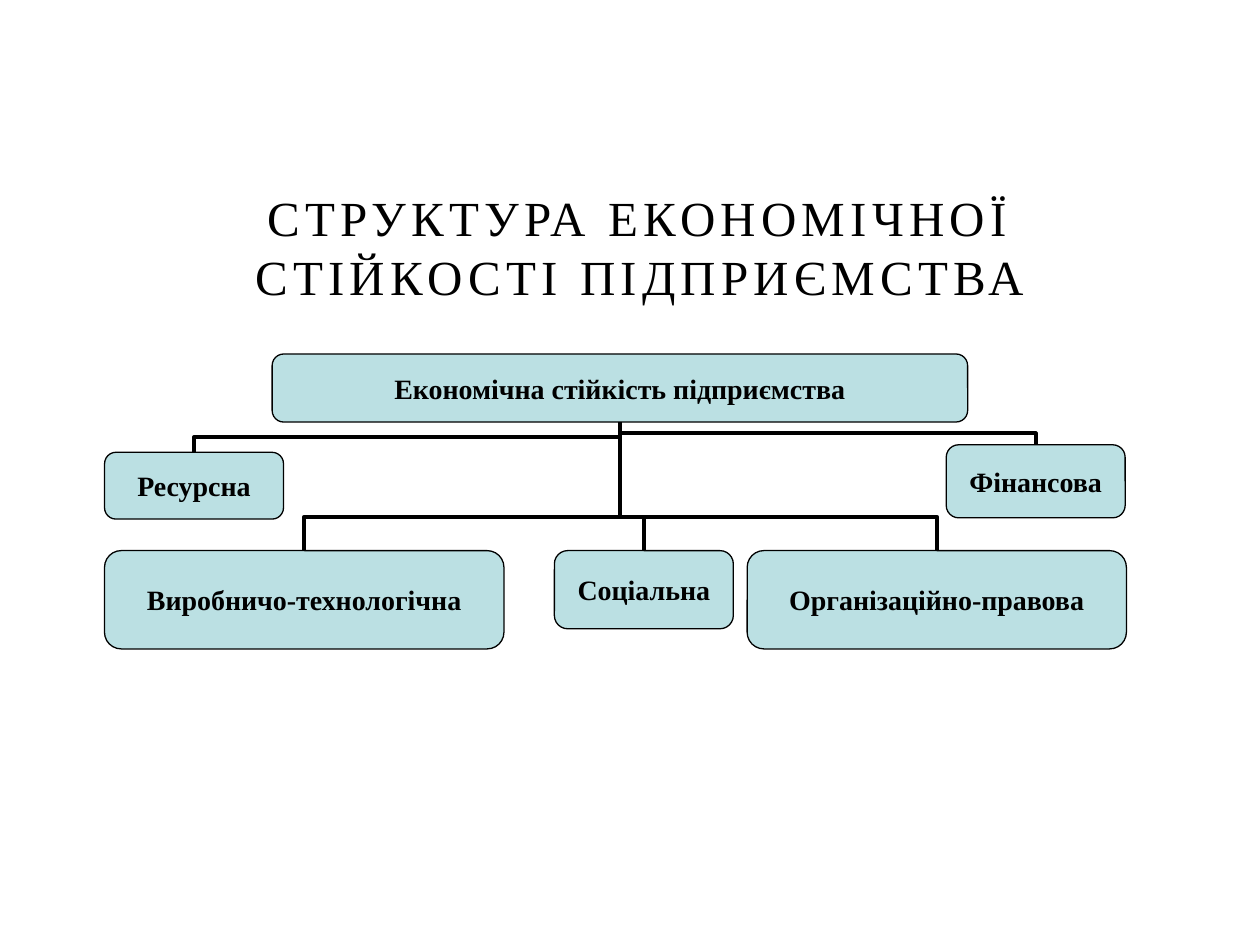
from lxml import etree
from pptx import Presentation
from pptx.dml.color import RGBColor
from pptx.enum.shapes import MSO_CONNECTOR, MSO_SHAPE
from pptx.enum.text import MSO_ANCHOR, PP_ALIGN
from pptx.oxml.ns import qn
from pptx.util import Inches, Pt

ELBOW = MSO_CONNECTOR.ELBOW
ROUNDED = MSO_SHAPE.ROUNDED_RECTANGLE
TOP, MIDDLE = MSO_ANCHOR.TOP, MSO_ANCHOR.MIDDLE
CENTER = PP_ALIGN.CENTER
TOP_SITE, BOTTOM_SITE = 0, 2

COLORS = {"ink": "000000", "box": "BBE0E3"}
TITLE_FORMAT = {"name": "Times New Roman", "size": Pt(28), "bold": False}
BOX_FORMAT = {"name": "Times New Roman", "size": Pt(16), "bold": True}


class ChartSlide:
    """Holds the slide and draws the parts of the hierarchy on it."""

    def __init__(self, slide):
        self.slide = slide

    def color(self, name):
        return RGBColor.from_string(COLORS[name])

    def add_text(self, shape, text, font_format, anchor, inset=0):
        frame = shape.text_frame
        frame.word_wrap = True
        frame.vertical_anchor = anchor
        for side in ("left", "top", "right", "bottom"):
            setattr(frame, f"margin_{side}", Inches(inset))
        paragraph = frame.paragraphs[0]
        paragraph.alignment = CENTER
        run = paragraph.add_run()
        run.text = text
        for name, value in font_format.items():
            setattr(run.font, name, value)
        run.font.color.rgb = self.color("ink")
        return run

    def title(self, text, *place):
        shape = self.slide.shapes.add_textbox(*map(Inches, place))
        run = self.add_text(shape, text, TITLE_FORMAT, TOP, inset=0.1)
        run.font._element.set("spc", "300")

    def box(self, text, *place):
        shape = self.slide.shapes.add_shape(ROUNDED, *map(Inches, place))
        shape.shadow.inherit = False
        shape.adjustments[0] = 0.17
        shape.fill.solid()
        shape.fill.fore_color.rgb = self.color("box")
        shape.line.color.rgb = self.color("ink")
        shape.line.width = Pt(0.75)
        self.add_text(shape, text, BOX_FORMAT, MIDDLE)
        return shape

    def branch(self, child, parent, bus):
        """Join a child's top to the parent's bottom, turning at height bus."""
        start_x = child.left + child.width // 2
        end_x = parent.left + parent.width // 2
        end_y = parent.top + parent.height
        rise, run = child.top - end_y, abs(end_x - start_x)
        connector = self.slide.shapes.add_connector(ELBOW, start_x, child.top, end_x, end_y)
        connector.begin_connect(child, TOP_SITE)
        connector.end_connect(parent, BOTTOM_SITE)

        # An upright elbow is a level one turned about its centre
        connector.left = (start_x + end_x - rise) // 2
        connector.top = (child.top + end_y - run) // 2
        connector.width, connector.height = rise, run
        on_right = start_x > end_x
        properties = connector._element.spPr
        transform = properties.find(qn("a:xfrm"))
        transform.set("rot", str((90 if on_right else 270) * 60000))
        transform.set("flipH", "1" if on_right else "0")
        transform.set("flipV", "0")
        geometry = properties.find(qn("a:prstGeom"))
        guides = geometry.find(qn("a:avLst"))
        if guides is None:
            guides = etree.SubElement(geometry, qn("a:avLst"))
        turn = round((child.top - Inches(bus)) / rise * 100000)
        etree.SubElement(guides, qn("a:gd"), name="adj1", fmla=f"val {turn}")

        connector.line.color.rgb = self.color("ink")
        connector.line.width = Pt(2.25)
        etree.SubElement(properties, qn("a:effectLst"))


def main():
    presentation = Presentation()
    presentation.slide_width, presentation.slide_height = Inches(10), Inches(7.5)
    chart = ChartSlide(presentation.slides.add_slide(presentation.slide_layouts[6]))

    chart.title("СТРУКТУРА ЕКОНОМІЧНОЇ СТІЙКОСТІ ПІДПРИЄМСТВА", 1.46, 1.39, 7.24, 1.49)

    # Root of the hierarchy
    root = chart.box("Економічна стійкість підприємства", 2.16, 2.81, 5.52, 0.54)

    # Components: label, left, top, width, height, height of the turn
    components = [
        ("Ресурсна", 0.83, 3.59, 1.42, 0.53, 3.47),
        ("Виробничо-технологічна", 0.83, 4.37, 3.17, 0.78, 4.1),
        ("Соціальна", 4.4, 4.37, 1.42, 0.62, 4.1),
        ("Організаційно-правова", 5.93, 4.37, 3.01, 0.78, 4.1),
        ("Фінансова", 7.51, 3.53, 1.42, 0.58, 3.44),
    ]
    for *details, bus in components:
        chart.branch(chart.box(*details), root, bus)

    presentation.save("out.pptx")


if __name__ == "__main__":
    main()
